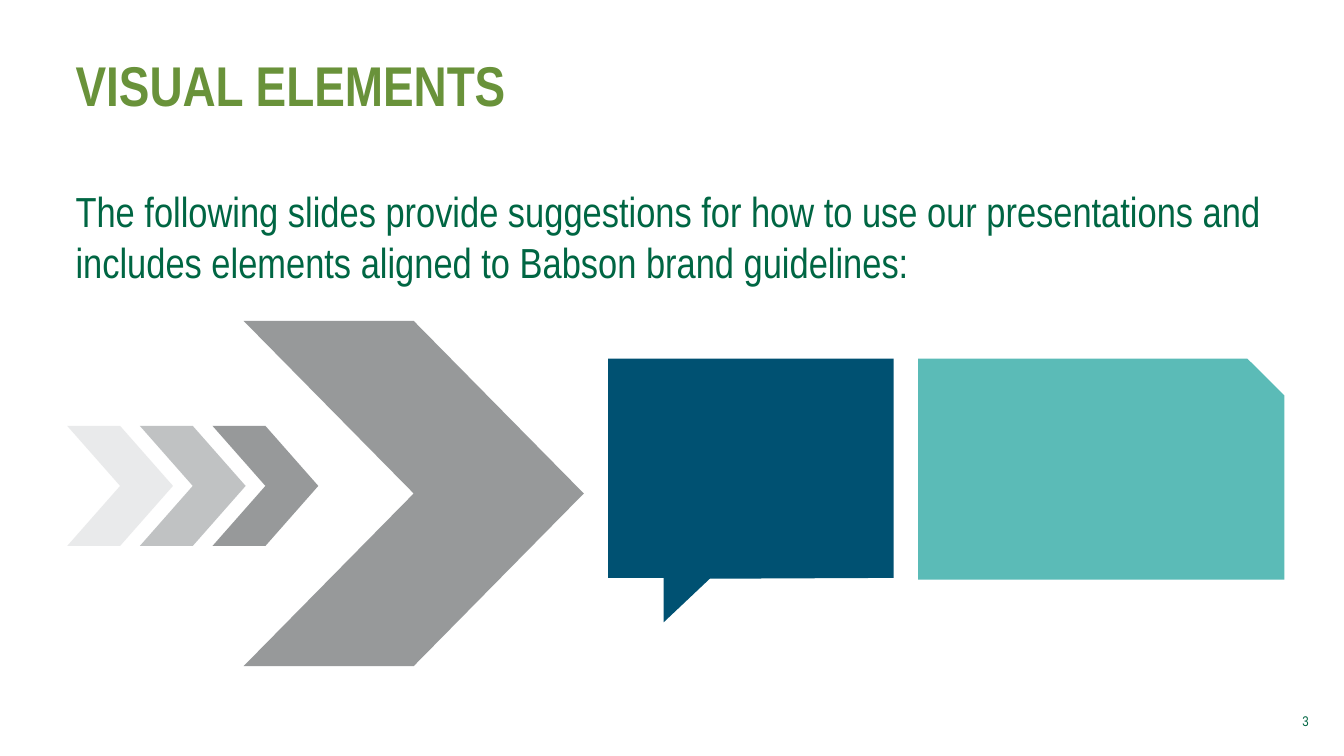
"""Build the Visual Elements slide with its sample brand shapes."""
from dataclasses import dataclass

from lxml import etree
from pptx import Presentation
from pptx.dml.color import RGBColor
from pptx.enum.shapes import MSO_SHAPE
from pptx.enum.text import MSO_ANCHOR, MSO_AUTO_SIZE, PP_ALIGN
from pptx.oxml.ns import qn
from pptx.shapes.base import BaseShape
from pptx.slide import Slide
from pptx.util import Inches, Pt

CHEVRON = MSO_SHAPE.CHEVRON
SNIPPED_CARD = MSO_SHAPE.SNIP_1_RECTANGLE
LEFT, RIGHT = PP_ALIGN.LEFT, PP_ALIGN.RIGHT
TOP, MIDDLE = MSO_ANCHOR.TOP, MSO_ANCHOR.MIDDLE
NO_AUTOFIT = MSO_AUTO_SIZE.NONE
TITLE_ONLY = 5


@dataclass(frozen=True)
class Theme:
    font: str = "Arial Narrow"
    title_size: int = 48
    body_size: int = 36
    number_size: int = 12
    title: str = "69923A"
    body: str = "006643"
    dark_gray: str = "6C6F70"
    mid_gray: str = "A6A9AA"
    light_gray: str = "E1E2E3"
    navy: str = "005172"
    teal: str = "5BBBB7"
    chevron_opacity: int = 70


THEME = Theme()


@dataclass(frozen=True)
class Box:
    left: float
    top: float
    width: float
    height: float


@dataclass(frozen=True)
class Label:
    text: str
    box: Box
    size: int
    color: str
    bold: bool = False
    align: PP_ALIGN = LEFT
    anchor: MSO_ANCHOR = MIDDLE
    inset_x: float = 0.1
    inset_y: float = 0.05


@dataclass(frozen=True)
class Chevron:
    box: Box
    color: str


TITLE = Label("VISUAL ELEMENTS", Box(0.8, 0.48, 14.1, 1.05),
              THEME.title_size, THEME.title, bold=True)
INTRO = Label("The following slides provide suggestions for how to use our presentations "
              "and includes elements aligned to Babson brand guidelines:",
              Box(0.76, 2.14, 14.53, 5.79), THEME.body_size, THEME.body,
              anchor=TOP, inset_x=0.14, inset_y=0.07)
PAGE_NUMBER = Label("3", Box(15.18, 8.34, 0.5, 0.48), THEME.number_size, THEME.body,
                    align=RIGHT)

TRAIL_LEFT, TRAIL_STEP = 0.8, 0.865
TRAIL_COLORS = (THEME.light_gray, THEME.mid_gray, THEME.dark_gray)
CHEVRONS = [Chevron(Box(2.9, 3.82, 4.05, 4.11), THEME.dark_gray)] + [
    Chevron(Box(TRAIL_LEFT + i * TRAIL_STEP, 5.07, 1.26, 1.43), color)
    for i, color in enumerate(TRAIL_COLORS)
]
SPEECH_BUBBLE = ((7.24, 4.27), (10.64, 4.27), (10.64, 6.88), (8.45, 6.89),
                 (7.9, 7.41), (7.9, 6.88), (7.24, 6.88))
CARD = Box(10.93, 4.27, 4.36, 2.63)
CARD_SNIP = 0.167


def edges(box: Box) -> tuple[int, int, int, int]:
    """Return the box as lengths in slide order."""
    return Inches(box.left), Inches(box.top), Inches(box.width), Inches(box.height)


def write_label(holder: BaseShape, label: Label) -> None:
    """Place a text holder and fill it with one formatted paragraph."""
    holder.left, holder.top, holder.width, holder.height = edges(label.box)
    frame = holder.text_frame
    frame.text = label.text
    frame.word_wrap = True
    frame.auto_size = NO_AUTOFIT
    frame.vertical_anchor = label.anchor
    frame.margin_left = frame.margin_right = Inches(label.inset_x)
    frame.margin_top = frame.margin_bottom = Inches(label.inset_y)
    paragraph = frame.paragraphs[0]
    paragraph.alignment = label.align
    font = paragraph.runs[0].font
    font.name = THEME.font
    font.size = Pt(label.size)
    font.bold = label.bold
    font.color.rgb = RGBColor.from_string(label.color)


def add_label(slide: Slide, label: Label) -> None:
    """Add a text box for the label."""
    write_label(slide.shapes.add_textbox(*edges(label.box)), label)


def paint(shape: BaseShape, color: str, opacity: int = 100) -> None:
    """Give a shape a flat fill without outline or shadow."""
    shape.shadow.inherit = False
    shape.line.fill.background()
    shape.fill.solid()
    shape.fill.fore_color.rgb = RGBColor.from_string(color)
    if opacity < 100:
        rgb = shape.fill._xPr.find(qn("a:solidFill")).find(qn("a:srgbClr"))
        etree.SubElement(rgb, qn("a:alpha")).set("val", str(opacity * 1000))


def add_chevron(slide: Slide, chevron: Chevron) -> None:
    """Add one translucent chevron."""
    arrow = slide.shapes.add_shape(CHEVRON, *edges(chevron.box))
    paint(arrow, chevron.color, THEME.chevron_opacity)


def add_speech_bubble(slide: Slide) -> None:
    """Add the speech bubble outline."""
    start, *corners = [(Inches(x), Inches(y)) for x, y in SPEECH_BUBBLE]
    outline = slide.shapes.build_freeform(*start)
    outline.add_line_segments(corners, close=True)
    paint(outline.convert_to_shape(), THEME.navy)


def add_card(slide: Slide) -> None:
    """Add the card with one snipped corner."""
    card = slide.shapes.add_shape(SNIPPED_CARD, *edges(CARD))
    card.adjustments[0] = CARD_SNIP
    paint(card, THEME.teal)


def main() -> None:
    """Create and save the slide."""
    deck = Presentation()
    deck.slide_width, deck.slide_height = Inches(16), Inches(9)
    slide = deck.slides.add_slide(deck.slide_layouts[TITLE_ONLY])
    write_label(slide.shapes.title, TITLE)
    for label in (PAGE_NUMBER, INTRO):
        add_label(slide, label)
    for chevron in CHEVRONS:
        add_chevron(slide, chevron)
    add_speech_bubble(slide)
    add_card(slide)
    deck.save("out.pptx")


if __name__ == "__main__":
    main()
